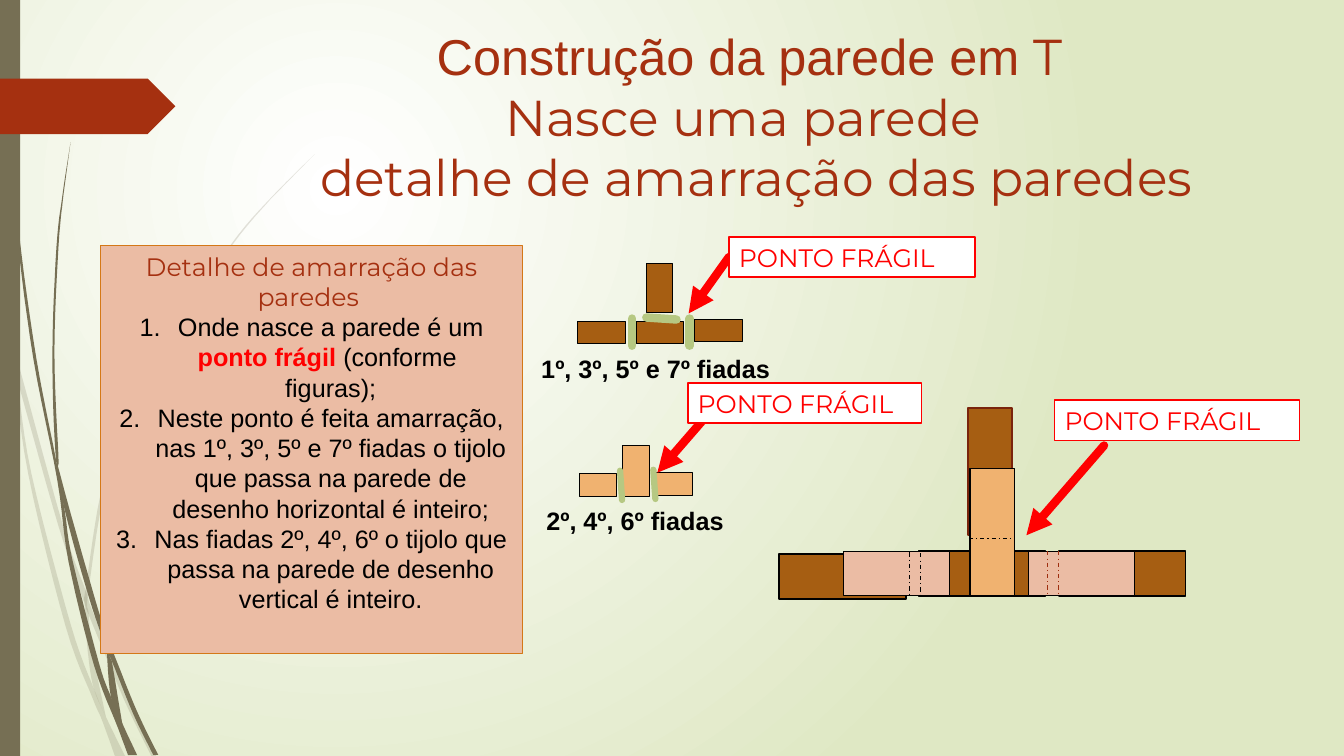
from dataclasses import dataclass

from lxml import etree
from pptx import Presentation
from pptx.dml.color import RGBColor
from pptx.enum.dml import MSO_LINE
from pptx.enum.shapes import MSO_CONNECTOR as Link, MSO_SHAPE as Shape
from pptx.enum.text import MSO_ANCHOR as Anchor, MSO_AUTO_SIZE as AutoSize, PP_ALIGN as Align
from pptx.oxml import parse_xml
from pptx.oxml.ns import nsdecls, qn
from pptx.util import Inches, Pt


@dataclass(frozen=True)
class Theme:
    olive: str = "766F54"
    rust: str = "A53010"
    rust_dark: str = "7A240C"
    rust_line: str = "9E2E0F"
    brown: str = "A65E12"
    sand: str = "F0B270"
    rose: str = "EBBCA4"
    amber: str = "D47817"
    mortar: str = "B6C882"
    red: str = "FF0000"
    black: str = "000000"
    white: str = "FFFFFF"
    glow: str = "DFE8C4"
    heading: str = "Montserrat"
    body: str = "Arial"
    title_size: int = 36
    text_size: int = 18


theme = Theme()
WIDTH, HEIGHT = 13.33, 7.5
GRAIN = 1000

TITLE = [
    [("Construção da parede em ", theme.body), ("T", theme.heading)],
    [("Nasce uma parede ", theme.heading)],
    [(" detalhe de amarração das paredes", theme.heading)],
]
PANEL_HEADING = "Detalhe de amarração das paredes "
PANEL_STEPS = [
    [("Onde nasce a parede é um ", False), ("ponto frágil ", True), ("(conforme ", False),
     (None, False), ("figuras);", False)],
    [("Neste ponto é feita amarração, nas 1º, 3º, 5º e 7º fiadas o tijolo que passa "
      "na parede de desenho horizontal é inteiro;", False)],
    [("Nas fiadas 2º, 4º, 6º o tijolo que passa na parede de desenho vertical é inteiro.", False)],
]
WEAK_POINT = "PONTO FRÁGIL"
CAPTIONS = [("1º, 3º, 5º e 7º fiadas", 5.27, 3.46), ("2º, 4º, 6º fiadas", 5.32, 4.96)]

PALE_STRANDS = [
    ([(0, 2.82), (.09, 3.22), (.17, 3.76), (.31, 4.69), (.7, 6.19), (.93, 6.83), (1.05, 7.11), (1.24, 7.5)],
     [(1.14, 7.5), (1.01, 7.14), (.92, 6.93), (.65, 6.21), (.28, 4.7), (.11, 3.5), (0, 2.99)]),
    ([(.14, 3.45), (.62, 5.2), (.85, 5.86), (.92, 6.07), (1.27, 6.92), (1.55, 7.5)],
     [(1.5, 7.5), (1.23, 6.94), (.88, 6.1), (.84, 5.99), (.58, 5.22), (.17, 3.76)]),
    ([(3.12, 1.53), (2.68, 1.97), (2.28, 2.44), (1.58, 3.48), (1.07, 4.61), (.85, 5.84),
      (.84, 5.99), (.87, 6.46), (.93, 6.83), (1.05, 7.11)],
     [(.91, 6.46), (.88, 6.1), (.88, 5.84), (1.1, 4.62), (1.6, 3.49), (2.29, 2.45), (2.68, 1.98)]),
]
DARK_STRANDS = [
    ([(.03, 0), (.04, .48), (.07, 1.1), (.17, 2.33), (.33, 3.55), (.57, 4.77), (.68, 5.57),
      (.93, 6.59), (1.17, 7.22), (1.27, 7.49)],
     [(1.36, 7.49), (1.22, 7.19), (1.1, 6.91), (.98, 6.57), (.72, 5.56), (.64, 5.05), (.55, 4.53),
      (.36, 3.55), (.19, 2.32), (.08, 1.09), (.05, .48), (.04, 0)]),
    ([(.7, 1.41), (.62, 1.93), (.56, 2.45), (.52, 3.49), (.55, 4.49), (.64, 5.05), (.88, 5.92),
      (1.06, 6.45), (1.11, 6.56), (1.32, 7.08), (1.52, 7.49)],
     [(1.57, 7.49), (1.36, 7.06), (1.13, 6.49), (1.06, 6.31), (.93, 5.9), (.6, 4.72), (.58, 4.53),
      (.54, 3.49), (.58, 2.45), (.63, 1.93)]),
    ([(1.06, 6.45), (1.1, 6.91), (1.22, 7.22)], [(1.21, 7.16), (1.11, 6.56)]),
]

LONG, SHORT, UPRIGHT = (1.26, .44), (1.05, .44), (.44, 1.26)
WALL = [
    (7.73, 5.5, LONG, theme.brown, theme.black, 1.25),
    (10.5, 5.47, LONG, theme.brown, theme.black, 1.25),
    (9.11, 5.47, LONG, theme.brown, theme.black, 1.25),
    (10.2, 5.47, SHORT, theme.rose, theme.black, .75),
    (9.6, 4.05, UPRIGHT, theme.brown, theme.rust_dark, 1.25),
    (8.37, 5.47, SHORT, theme.rose, theme.black, .75),
    (9.62, 4.65, UPRIGHT, theme.sand, theme.black, 1),
]
ODD_COURSE = [(left, top, (.47, .22), theme.brown, theme.black, .75)
              for left, top in [(6.31, 3.19), (6.89, 3.17), (5.73, 3.19)]]
ODD_COURSE.append((6.41, 2.61, (.26, .49), theme.brown, theme.black, .75))
EVEN_COURSE = [
    (6.5, 4.69, (.37, .23), theme.sand, theme.black, .75),
    (6.17, 4.42, (.27, .51), theme.sand, theme.black, .75),
    (5.75, 4.7, (.37, .23), theme.sand, theme.black, .75),
]
JOINTS = [(9.61, 5.34, 10.04, 5.34, theme.black)] + [
    (x, top, x, top + .44, colour) for x, top, colour in [
        (10.5, 5.47, theme.rust_line), (10.39, 5.47, theme.rust_line),
        (9.13, 5.49, theme.black), (9.02, 5.48, theme.black)]]
ODD_MORTAR = [(6.84, 3.16, 6.84, 3.43), (6.27, 3.16, 6.27, 3.43), (6.41, 3.15, 6.71, 3.17)]
EVEN_MORTAR = [(6.48, 4.66, 6.5, 4.95), (6.15, 4.67, 6.17, 4.96)]
CALLOUTS = [
    ((10.46, 3.97, 2.43), (10.95, 4.42, 10.18, 5.31), False),
    ((6.82, 3.8, 2.32), (7.1, 4.02, 6.52, 4.69), False),
    ((7.23, 2.35, 2.44), (7.23, 2.55, 6.83, 3.11), True),
]

deck = Presentation()
deck.slide_width, deck.slide_height = Inches(WIDTH), Inches(HEIGHT)
page = deck.slides.add_slide(deck.slide_layouts[5])


def paint(shape, fill, line=None, weight=.75):
    shape.shadow.inherit = False
    shape.fill.solid()
    shape.fill.fore_color.rgb = RGBColor.from_string(fill)
    if line:
        shape.line.color.rgb = RGBColor.from_string(line)
        shape.line.width = Pt(weight)
    else:
        shape.line.fill.background()
    return shape


def add_box(left, top, size, fill, line=None, weight=.75, kind=Shape.RECTANGLE):
    box = page.shapes.add_shape(kind, *map(Inches, (left, top, *size)))
    return paint(box, fill, line, weight)


def add_line(ends, colour, weight, dash=None, arrow=False):
    link = page.shapes.add_connector(Link.STRAIGHT, *map(Inches, ends))
    link.line.color.rgb = RGBColor.from_string(colour)
    link.line.width = Pt(weight)
    if dash:
        link.line.dash_style = dash
    else:
        link.line._get_or_add_ln().set("cap", "rnd")
    if arrow:
        etree.SubElement(link.line._get_or_add_ln(), qn("a:tailEnd"), type="triangle")
    etree.SubElement(link._element.spPr, qn("a:effectLst"))
    return link


def style(font, colour, name, size=theme.text_size, bold=False):
    font.name, font.size, font.bold = name, Pt(size), bold
    font.color.rgb = RGBColor.from_string(colour)


def write(box, text, colour, name, bold=False, align=Align.LEFT):
    frame = box.text_frame
    frame.word_wrap, frame.vertical_anchor = True, Anchor.TOP
    para = frame.paragraphs[0]
    para.text, para.alignment = text, align
    style(para.font, colour, name, bold=bold)
    return frame


def smooth(edge, steps=6):
    padded = [edge[0], *edge, edge[-1]]
    points = [edge[0]]
    for a, b, c, d in zip(padded, padded[1:], padded[2:], padded[3:]):
        for t in (step / steps for step in range(1, steps + 1)):
            points.append(tuple(
                (2 * q + (r - p) * t + (2 * p - 5 * q + 4 * r - s) * t ** 2
                 + (3 * q - p - 3 * r + s) * t ** 3) / 2
                for p, q, r, s in zip(a, b, c, d)))
    return points


def add_strand(edges, alpha=None):
    outline = [(round(x * GRAIN), round(y * GRAIN)) for edge in edges for x, y in smooth(edge)]
    builder = page.shapes.build_freeform(*outline[0], scale=Inches(1) / GRAIN)
    builder.add_line_segments(outline[1:], close=True)
    strand = paint(builder.convert_to_shape(), theme.olive)
    if alpha:
        colour = strand._element.spPr.find(qn("a:solidFill"))[0]
        etree.SubElement(colour, qn("a:alpha"), val=str(alpha * 1000))


def add_background():
    page.background.fill.gradient()
    old = page._element.find(".//" + qn("a:gradFill"))
    stops = "".join(f'<a:gs pos="{pos}"><a:srgbClr val="{colour}"/></a:gs>'
                    for pos, colour in [(0, theme.white), (100000, theme.glow)])
    old.getparent().replace(old, parse_xml(
        f'<a:gradFill {nsdecls("a")} rotWithShape="1"><a:gsLst>{stops}</a:gsLst><a:path path="circle">'
        '<a:fillToRect l="50000" t="50000" r="100000" b="100000"/></a:path></a:gradFill>'))


def add_title():
    title = page.shapes.title
    title.left, title.top, title.width, title.height = map(Inches, (2.33, .2, 10.21, 1.92))
    frame = title.text_frame
    frame.word_wrap, frame.auto_size, frame.vertical_anchor = True, AutoSize.NONE, Anchor.TOP
    for index, line in enumerate(TITLE):
        para = frame.add_paragraph() if index else frame.paragraphs[0]
        para.alignment, para.space_before = Align.CENTER, Pt(0)
        for text, name in line:
            span = para.add_run()
            span.text = text
            style(span.font, theme.rust, name, theme.title_size)


def add_panel():
    panel = add_box(1, 2.44, (4.18, 4.04), theme.rose, theme.amber)
    frame = write(panel, PANEL_HEADING, theme.rust, theme.heading, align=Align.CENTER)
    for step in PANEL_STEPS:
        para = frame.add_paragraph()
        para.alignment = Align.CENTER
        for text, strong in step:
            if text is None:
                para.add_line_break()
                continue
            span = para.add_run()
            span.text = text
            style(span.font, theme.red if strong else theme.black, theme.body, bold=strong)
        props = para._p.get_or_add_pPr()
        props.set("marL", str(Inches(.38)))
        props.set("indent", str(-Inches(.38)))
        etree.SubElement(props, qn("a:buFont"), typeface=theme.body)
        etree.SubElement(props, qn("a:buAutoNum"), type="arabicPeriod")


def add_callout(place, ends, joined):
    left, top, width = place
    arrow = add_line(ends, theme.red, 6, arrow=True)
    label = add_box(left, top, (width, .4), theme.white, theme.red, 1.25)
    write(label, WEAK_POINT, theme.red, theme.heading)
    if joined:
        arrow.begin_connect(label, 1)


add_background()
for strand_edges in PALE_STRANDS:
    add_strand(strand_edges, 20)
for strand_edges in DARK_STRANDS:
    add_strand(strand_edges)
add_box(0, 0, (.2, HEIGHT), theme.olive)
add_box(0, .78, (1.74, .55), theme.rust, kind=Shape.PENTAGON)
add_title()
add_panel()
for brick in WALL + ODD_COURSE + EVEN_COURSE:
    add_box(*brick)
for *joint, joint_colour in JOINTS:
    add_line(joint, joint_colour, .75, dash=MSO_LINE.DASH_DOT)
for bed in ODD_MORTAR:
    add_line(bed, theme.mortar, 6)
for bed in EVEN_MORTAR:
    add_line(bed, theme.mortar, 4.5)
for callout in CALLOUTS:
    add_callout(*callout)
for caption, caption_left, caption_top in CAPTIONS:
    caption_box = page.shapes.add_textbox(*map(Inches, (caption_left, caption_top, 2.54, .4)))
    write(caption_box, caption, theme.black, theme.body, bold=True)
deck.save("out.pptx")
